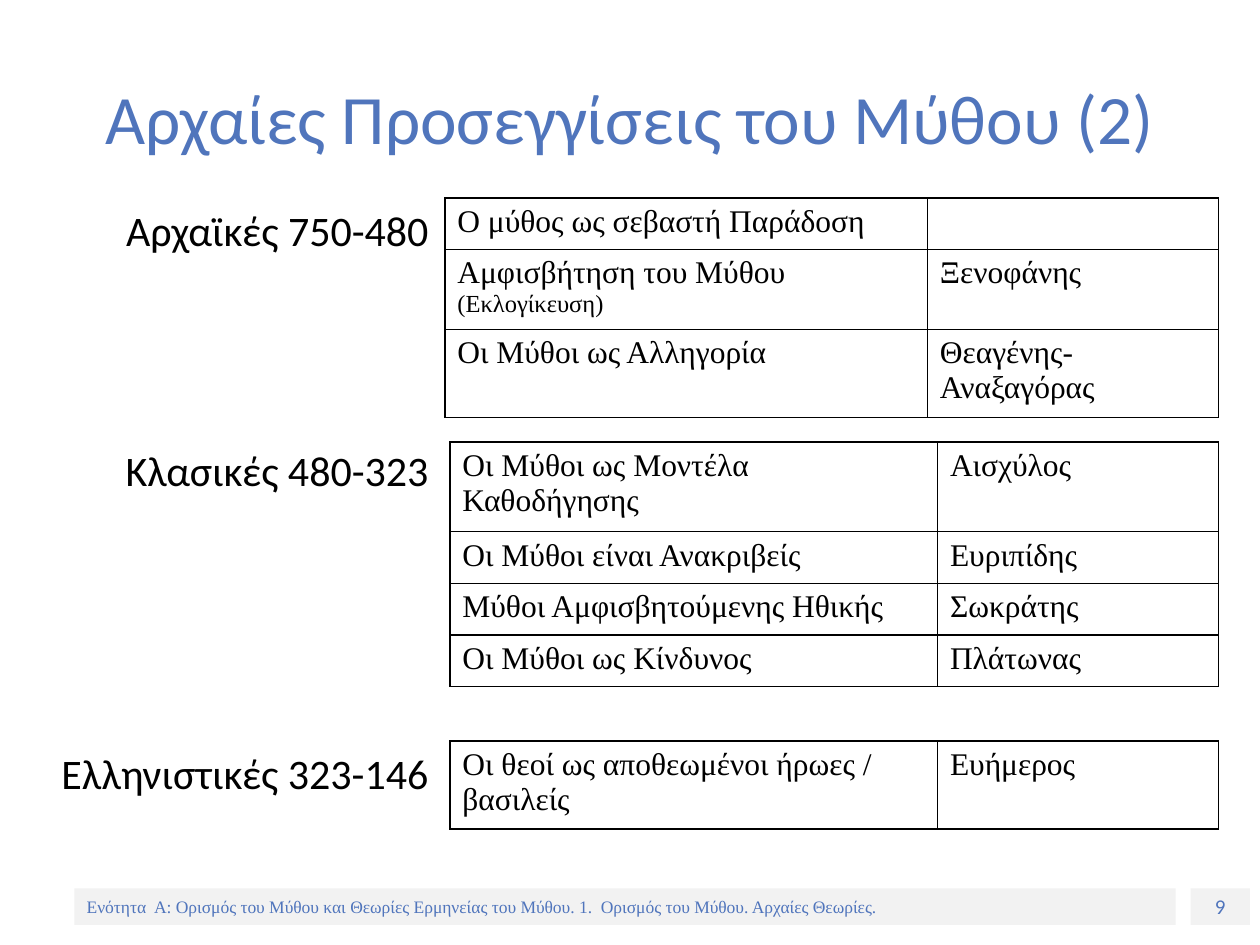
from lxml import etree
from pptx import Presentation
from pptx.dml.color import RGBColor
from pptx.enum.shapes import MSO_SHAPE
from pptx.enum.text import MSO_ANCHOR, PP_ALIGN
from pptx.oxml.ns import qn
from pptx.util import Inches, Pt

RECTANGLE = MSO_SHAPE.RECTANGLE
TOP, MIDDLE = MSO_ANCHOR.TOP, MSO_ANCHOR.MIDDLE
LEFT, CENTER, RIGHT = PP_ALIGN.LEFT, PP_ALIGN.CENTER, PP_ALIGN.RIGHT

TITLE = "Αρχαίες Προσεγγίσεις του Μύθου (2)"
FOOTER = ("Ενότητα  Α: Ορισμός του Μύθου και Θεωρίες Ερμηνείας του Μύθου. "
          "1.  Ορισμός του Μύθου. Αρχαίες Θεωρίες.")
PAGE_NUMBER = "9"

PERIODS = [
    {"label": "Αρχαϊκές 750-480", "label_top": 1.57, "table_top": 1.57,
     "left": 3.53, "columns": (3.83, 2.31), "heights": (0.41, 0.59, 0.65),
     "rows": [
         ("Ο μύθος ως σεβαστή Παράδοση", "", ""),
         ("Αμφισβήτηση του Μύθου ", "(Εκλογίκευση)", "Ξενοφάνης"),
         ("Οι Μύθοι ως Αλληγορία", "", "Θεαγένης-\nΑναξαγόρας"),
     ]},
    {"label": "Κλασικές 480-323", "label_top": 3.48, "table_top": 3.51,
     "left": 3.57, "columns": (3.87, 2.23), "heights": (0.71, 0.41, 0.41, 0.41),
     "rows": [
         ("Οι Μύθοι ως Μοντέλα Καθοδήγησης", "", "Αισχύλος"),
         ("Οι Μύθοι είναι Ανακριβείς", "", "Ευριπίδης"),
         ("Μύθοι Αμφισβητούμενης Ηθικής", "", "Σωκράτης"),
         ("Οι Μύθοι ως Κίνδυνος", "", "Πλάτωνας"),
     ]},
    {"label": "Ελληνιστικές 323-146", "label_top": 5.88, "table_top": 5.88,
     "left": 3.57, "columns": (3.87, 2.23), "heights": (0.7,),
     "rows": [("Οι θεοί ως αποθεωμένοι ήρωες / βασιλείς", "", "Ευήμερος")]},
]

THEME = {
    "accent": "5075BC", "ink": "000000", "panel": "F2F2F2",
    "sans": "Calibri", "serif": "Times New Roman",
    "title": 39.6, "label": 24, "cell": 18, "note": 14, "number": 12, "footer": 10,
    "border": 1,
}
LABEL_LEFT, LABEL_RIGHT, LABEL_HEIGHT = 0.2, 3.5, 0.55


def add_span(para, text, size, font, color):
    span = para.add_run()
    span.text = text
    span.font.size = Pt(THEME[size])
    span.font.name = THEME[font]
    span.font.color.rgb = RGBColor.from_string(THEME[color])


def write(box, text, size, font, color, align=LEFT, anchor=TOP):
    frame = box.text_frame
    frame.word_wrap = True
    frame.vertical_anchor = anchor
    para = frame.paragraphs[0]
    para.alignment = align
    add_span(para, text, size, font, color)


def add_text(page, place, *style):
    write(page.shapes.add_textbox(*map(Inches, place)), *style)


def add_panel(page, place, *style):
    box = page.shapes.add_shape(RECTANGLE, *map(Inches, place))
    box.shadow.inherit = False
    box.fill.solid()
    box.fill.fore_color.rgb = RGBColor.from_string(THEME["panel"])
    box.line.fill.background()
    write(box, *style)


def add_borders(cell):
    properties = cell._tc.get_or_add_tcPr()
    for position, side in enumerate(("lnL", "lnR", "lnT", "lnB")):
        line = etree.Element(qn(f"a:{side}"), w=str(Pt(THEME["border"])))
        fill = etree.SubElement(line, qn("a:solidFill"))
        etree.SubElement(fill, qn("a:srgbClr"), val=THEME["ink"])
        properties.insert(position, line)


def fill_cell(cell, text, note=""):
    cell.fill.background()
    add_borders(cell)
    for index, line in enumerate(text.split("\n")):
        frame = cell.text_frame
        para = frame.add_paragraph() if index else frame.paragraphs[0]
        para.font.size = Pt(THEME["cell"])
        if line:
            add_span(para, line, "cell", "serif", "ink")
        if note:
            add_span(para, note, "note", "serif", "ink")


def add_period(page, period):
    add_text(page, (LABEL_LEFT, period["label_top"], LABEL_RIGHT - LABEL_LEFT, LABEL_HEIGHT),
             period["label"], "label", "sans", "ink", RIGHT)
    columns, heights = period["columns"], period["heights"]
    place = (period["left"], period["table_top"], sum(columns), sum(heights))
    table = page.shapes.add_table(len(heights), len(columns), *map(Inches, place)).table
    table.first_row = table.horz_banding = False
    for column, width in zip(table.columns, columns):
        column.width = Inches(width)
    for row, height, (view, note, thinker) in zip(table.rows, heights, period["rows"]):
        row.height = Inches(height)
        fill_cell(row.cells[0], view, note)
        fill_cell(row.cells[1], thinker)


def main():
    deck = Presentation()
    deck.slide_width, deck.slide_height = Inches(10), Inches(7.5)
    page = deck.slides.add_slide(deck.slide_layouts[6])
    add_panel(page, (9.45, 7.05, 0.47, 0.29),
              PAGE_NUMBER, "number", "sans", "accent", CENTER, MIDDLE)
    add_panel(page, (0.59, 7.05, 8.74, 0.29),
              FOOTER, "footer", "serif", "accent", LEFT, MIDDLE)
    add_text(page, (0.5, 0.3, 9, 1.25), TITLE, "title", "sans", "accent", CENTER, MIDDLE)
    for period in PERIODS:
        add_period(page, period)
    deck.save("out.pptx")


if __name__ == "__main__":
    main()
